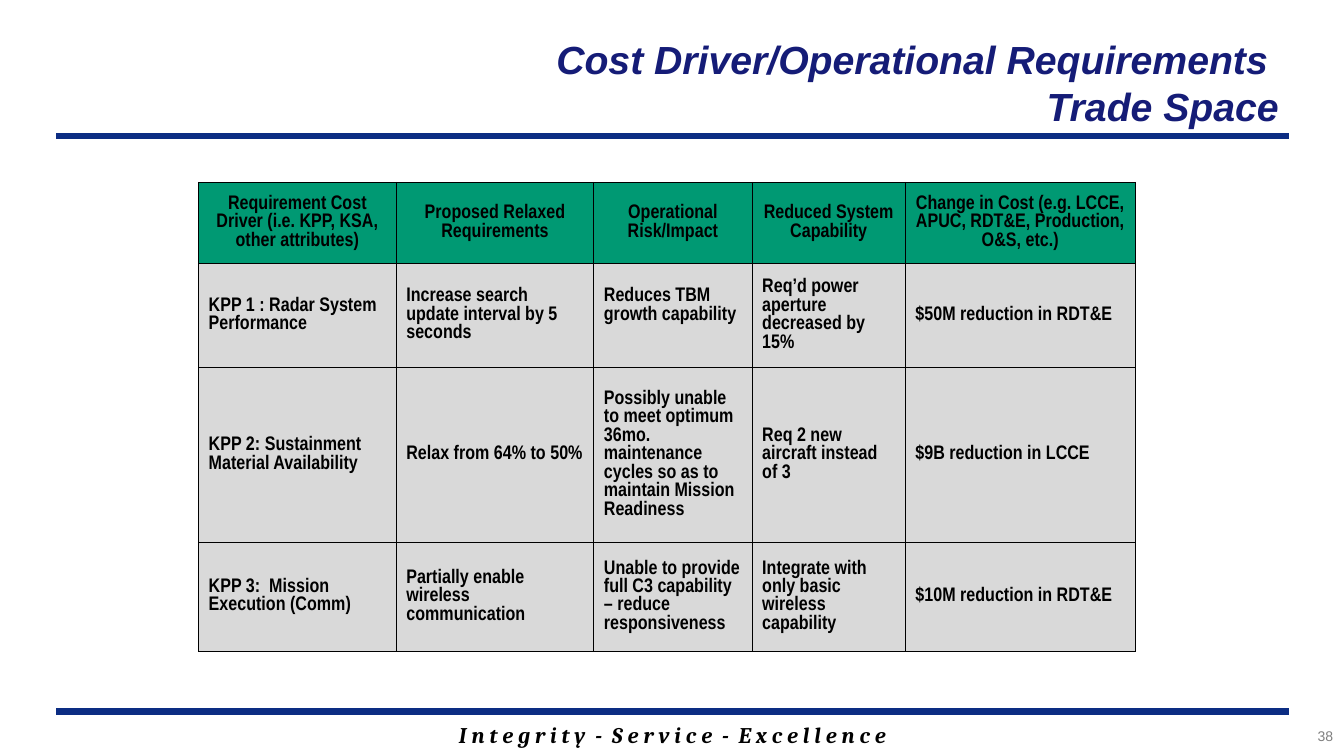
from lxml import etree
from pptx import Presentation
from pptx.dml.color import RGBColor
from pptx.enum import shapes, text
from pptx.oxml import ns
from pptx.util import Inches, Pt

RULE_BLUE, TITLE_BLUE = "0C2D83", "151C77"
HEADER_GREEN, BODY_GRAY = "009973", "D9D9D9"
BLACK, NUMBER_GRAY = "000000", "7F7F7F"

COLUMN_WIDTHS = [1.96, 1.96, 1.57, 1.52, 2.28]
ROW_HEIGHTS = [0.8, 1.03, 1.73, 1.08]
TRADES = [
    ["Requirement Cost Driver (i.e. KPP, KSA, other attributes)",
     "Proposed Relaxed Requirements", "Operational Risk/Impact",
     "Reduced System Capability",
     "Change in Cost (e.g. LCCE, APUC, RDT&E, Production, O&S, etc.)"],
    ["KPP 1 : Radar System Performance",
     "Increase search update interval by 5 seconds",
     "Reduces TBM growth capability",
     "Req’d power aperture decreased by 15%", "$50M reduction in RDT&E"],
    ["KPP 2: Sustainment Material Availability", "Relax from 64% to 50%",
     "Possibly unable to meet optimum 36mo. maintenance cycles so as to "
     "maintain Mission Readiness",
     "Req 2 new aircraft instead of 3", "$9B reduction in LCCE"],
    ["KPP 3:  Mission Execution (Comm)",
     "Partially enable wireless communication",
     "Unable to provide full C3 capability – reduce responsiveness",
     "Integrate with only basic wireless capability",
     "$10M reduction in RDT&E"],
]


def color(value):
    return RGBColor.from_string(value)


def format_text(frame, font_name, size, ink, align, bold=False, italic=False):
    for paragraph in frame.paragraphs:
        paragraph.alignment = align
        for run in paragraph.runs:
            font = run.font
            font.name, font.size = font_name, Pt(size)
            font.bold, font.italic = bold, italic
            font.color.rgb = color(ink)


def add_label(slide, box, wording, *style, **emphasis):
    """Place middle-anchored text in a box given in inches."""
    frame = slide.shapes.add_textbox(*map(Inches, box)).text_frame
    frame.word_wrap = True
    frame.vertical_anchor = text.MSO_ANCHOR.MIDDLE
    frame.text = wording
    format_text(frame, *style, **emphasis)


def add_rule(slide, left, top, width):
    rule = slide.shapes.add_connector(
        shapes.MSO_CONNECTOR.STRAIGHT, Inches(left), Inches(top),
        Inches(left + width), Inches(top))
    rule.line.color.rgb = color(RULE_BLUE)
    rule.line.width = Pt(4.5)
    etree.SubElement(rule._element.spPr, ns.qn("a:effectLst"))


def add_borders(cell):
    """Draw a thin black line on all four sides, ahead of the cell's fill."""
    properties = cell._tc.get_or_add_tcPr()
    for position, side in enumerate(("lnL", "lnR", "lnT", "lnB")):
        line = etree.Element(ns.qn(f"a:{side}"), w=str(Pt(1)))
        fill = etree.SubElement(line, ns.qn("a:solidFill"))
        etree.SubElement(fill, ns.qn("a:srgbClr"), val=BLACK)
        properties.insert(position, line)


def add_trade_table(slide, left, top):
    table = slide.shapes.add_table(
        len(ROW_HEIGHTS), len(COLUMN_WIDTHS), Inches(left), Inches(top),
        Inches(sum(COLUMN_WIDTHS)), Inches(sum(ROW_HEIGHTS))).table
    for column, width in zip(table.columns, COLUMN_WIDTHS):
        column.width = Inches(width)
    for index, (row, height, trade) in enumerate(
            zip(table.rows, ROW_HEIGHTS, TRADES)):
        row.height = Inches(height)
        header = index == 0
        align = text.PP_ALIGN.CENTER if header else text.PP_ALIGN.LEFT
        for cell, wording in zip(row.cells, trade):
            cell.text_frame.text = wording
            cell.vertical_anchor = text.MSO_ANCHOR.MIDDLE
            cell.fill.solid()
            cell.fill.fore_color.rgb = color(
                HEADER_GREEN if header else BODY_GRAY)
            format_text(cell.text_frame, "Arial Narrow", 14, BLACK, align,
                        bold=True)
            add_borders(cell)
    # The radar risk sits one line higher than its neighbours
    table.cell(1, 2).margin_bottom = Inches(0.24)


def add_header(slide, left, top, width):
    title_left = left + 3
    add_label(slide, (title_left, top, left + width - title_left, 1.04),
              "Cost Driver/Operational Requirements \nTrade Space",
              "Arial", 28, TITLE_BLUE, text.PP_ALIGN.RIGHT,
              bold=True, italic=True)
    add_rule(slide, left, top + 1.05, width)


def add_footer(slide, left, top, width):
    add_rule(slide, left, top, width)
    add_label(slide, (left + 1.33, top + 0.04, 9.56, 0.37),
              "I n t e g r i t y  -  S e r v i c e  -  E x c e l l e n c e",
              "Cambria", 16, BLACK, text.PP_ALIGN.CENTER,
              bold=True, italic=True)
    add_label(slide, (left + 11.09, top + 0.08, 1.67, 0.33), "38",
              "Arial", 10, NUMBER_GRAY, text.PP_ALIGN.RIGHT)


def main():
    deck = Presentation()
    deck.slide_width, deck.slide_height = Inches(13.33), Inches(7.5)
    slide = deck.slides.add_slide(deck.slide_layouts[6])
    add_header(slide, 0.56, 0.3, 12.22)
    add_trade_table(slide, 1.97, 1.81)
    add_footer(slide, 0.56, 7.06, 12.22)
    deck.save("out.pptx")


if __name__ == "__main__":
    main()
